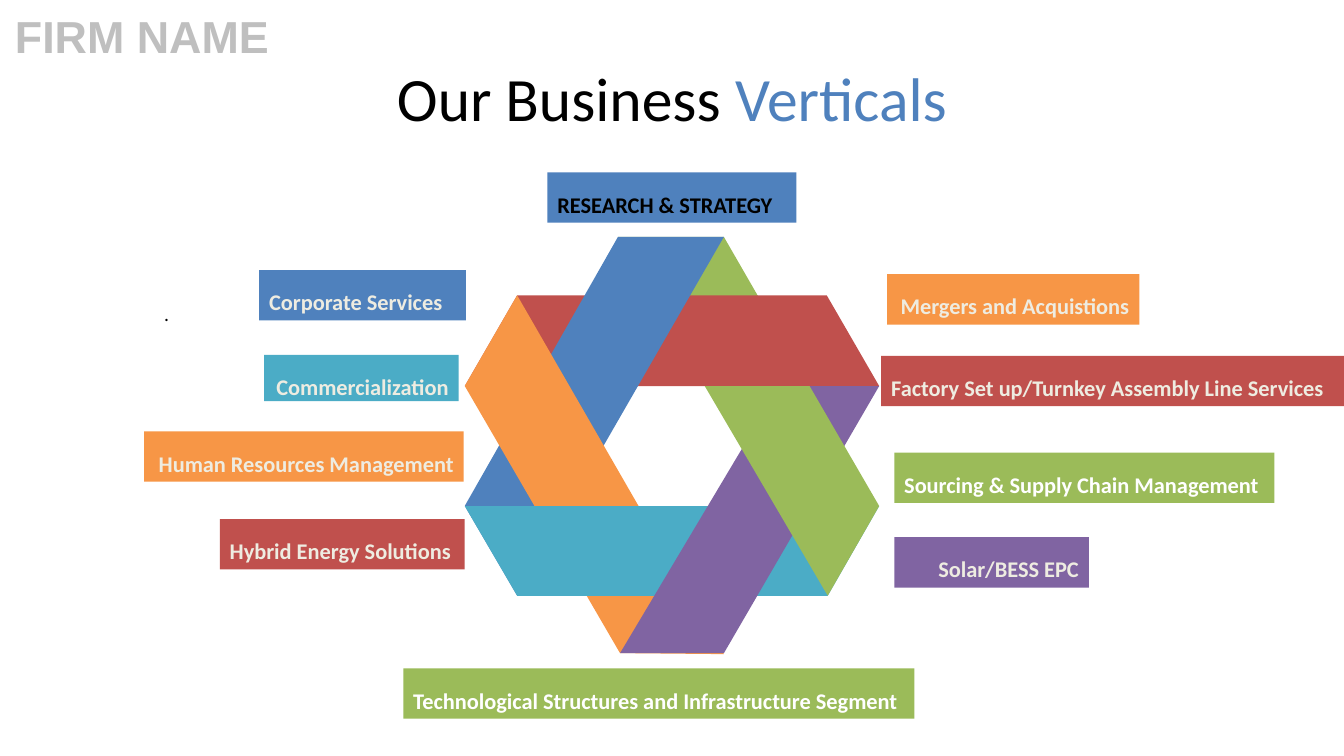
import pptx
import pptx.dml.color
import pptx.enum.shapes
import pptx.enum.text
import pptx.util

Inches = pptx.util.Inches
ALIGN = pptx.enum.text.PP_ALIGN
ANCHOR = pptx.enum.text.MSO_ANCHOR

COLORS = {
    "blue": "4F81BD", "red": "C0504D", "green": "9BBB59", "purple": "8064A2",
    "teal": "4BACC6", "orange": "F79646", "black": "000000", "white": "FFFFFF",
    "cream": "EEECE1", "gray": "BFBFBF",
}

TITLE = [("Our Business ", "black"), ("Verticals", "blue")]
BRAND = "FIRM NAME"

# Bands of the woven star, back to front: colour, corner points
BANDS = [
    ("green", [(6.13, 2.35), (7.18, 2.35), (7.56, 3.01), (6.69, 3.31)]),
    ("red", [(5.13, 2.93), (8.2, 2.93), (8.72, 3.83), (4.61, 3.83)]),
    ("blue", [(6.13, 2.35), (7.18, 2.35), (5.13, 5.91), (4.61, 5.02)]),
    ("orange", [(5.13, 2.93), (7.18, 6.49), (6.15, 6.48), (4.61, 3.83)]),
    ("teal", [(4.61, 5.02), (8.72, 5.02), (8.21, 5.91), (5.13, 5.91)]),
    ("purple", [(7.73, 3.83), (8.72, 3.83), (7.18, 6.48), (6.15, 6.48)]),
    ("green", [(6.99, 3.83), (8.03, 3.83), (8.72, 5.02), (8.21, 5.91)]),
]

# Verticals: text, fill, text colour, alignment, (left, top, width, height)
VERTICALS = [
    ("Mergers and Acquistions", "orange", "cream", ALIGN.RIGHT, (8.8, 2.72, 2.5, 0.5)),
    ("Commercialization", "teal", "cream", ALIGN.RIGHT, (2.62, 3.52, 1.93, 0.46)),
    ("Solar/BESS EPC", "purple", "cream", ALIGN.RIGHT, (8.87, 5.33, 1.93, 0.5)),
    ("Factory Set up/Turnkey Assembly Line Services", "red", "cream", ALIGN.LEFT,
     (8.74, 3.53, 4.59, 0.5)),
    ("Sourcing & Supply Chain Management", "green", "white", ALIGN.LEFT,
     (8.87, 4.49, 3.77, 0.5)),
    ("RESEARCH & STRATEGY", "blue", "black", ALIGN.LEFT, (5.43, 1.71, 2.47, 0.5)),
    ("Corporate Services", "blue", "cream", ALIGN.LEFT, (2.57, 2.68, 2.05, 0.5)),
    ("Hybrid Energy Solutions", "red", "cream", ALIGN.LEFT, (2.18, 5.15, 2.43, 0.5)),
    ("Human Resources Management", "orange", "cream", ALIGN.RIGHT, (1.43, 4.28, 3.17, 0.5)),
    ("Technological Structures and Infrastructure Segment", "green", "white", ALIGN.LEFT,
     (4, 6.63, 5.07, 0.5)),
]


def rgb(name):
    return pptx.dml.color.RGBColor.from_string(COLORS[name])


def write(shape, runs, size=16, font="Calibri", bold=False, align=ALIGN.LEFT,
          spacing=None, anchor=ANCHOR.TOP, wrap=True):
    """Fill a shape with one paragraph of (text, colour) runs."""
    frame = shape.text_frame
    frame.word_wrap = wrap
    frame.vertical_anchor = anchor
    paragraph = frame.paragraphs[0]
    paragraph.alignment = align
    if spacing:
        paragraph.line_spacing = spacing
    for text, color in runs:
        run = paragraph.add_run()
        run.text = text
        run.font.name = font
        run.font.size = pptx.util.Pt(size)
        run.font.bold = bold
        run.font.color.rgb = rgb(color)


def paint(shape, color):
    shape.shadow.inherit = False
    shape.fill.solid()
    shape.fill.fore_color.rgb = rgb(color)
    shape.line.fill.background()


def add_band(slide, color, corners):
    points = [(Inches(x), Inches(y)) for x, y in corners]
    builder = slide.shapes.build_freeform(*points[0], scale=1.0)
    builder.add_line_segments(points[1:], close=True)
    paint(builder.convert_to_shape(), color)


def main():
    deck = pptx.Presentation()
    deck.slide_width, deck.slide_height = Inches(13.33), Inches(7.5)
    slide = deck.slides.add_slide(deck.slide_layouts[5])

    title = slide.shapes.title
    title.left, title.top = Inches(1.05), Inches(0.51)
    title.width, title.height = Inches(11.23), Inches(0.91)
    write(title, TITLE, size=44, align=ALIGN.CENTER, anchor=ANCHOR.MIDDLE)

    for color, corners in BANDS:
        add_band(slide, color, corners)

    for text, fill, color, align, place in VERTICALS:
        label = slide.shapes.add_shape(
            pptx.enum.shapes.MSO_SHAPE.RECTANGLE, *map(Inches, place))
        paint(label, fill)
        write(label, [(text, color)], bold=True, align=align, spacing=1.5)

    brand = slide.shapes.add_textbox(*map(Inches, (0.05, 0.04, 2.91, 0.64)))
    write(brand, [(BRAND, "gray")], size=32, font="Arial", bold=True, wrap=False)

    dot = slide.shapes.add_textbox(*map(Inches, (1.53, 2.95, 3.31, 0.34)))
    write(dot, [(".", "black")], size=14)

    deck.save("out.pptx")


if __name__ == "__main__":
    main()
